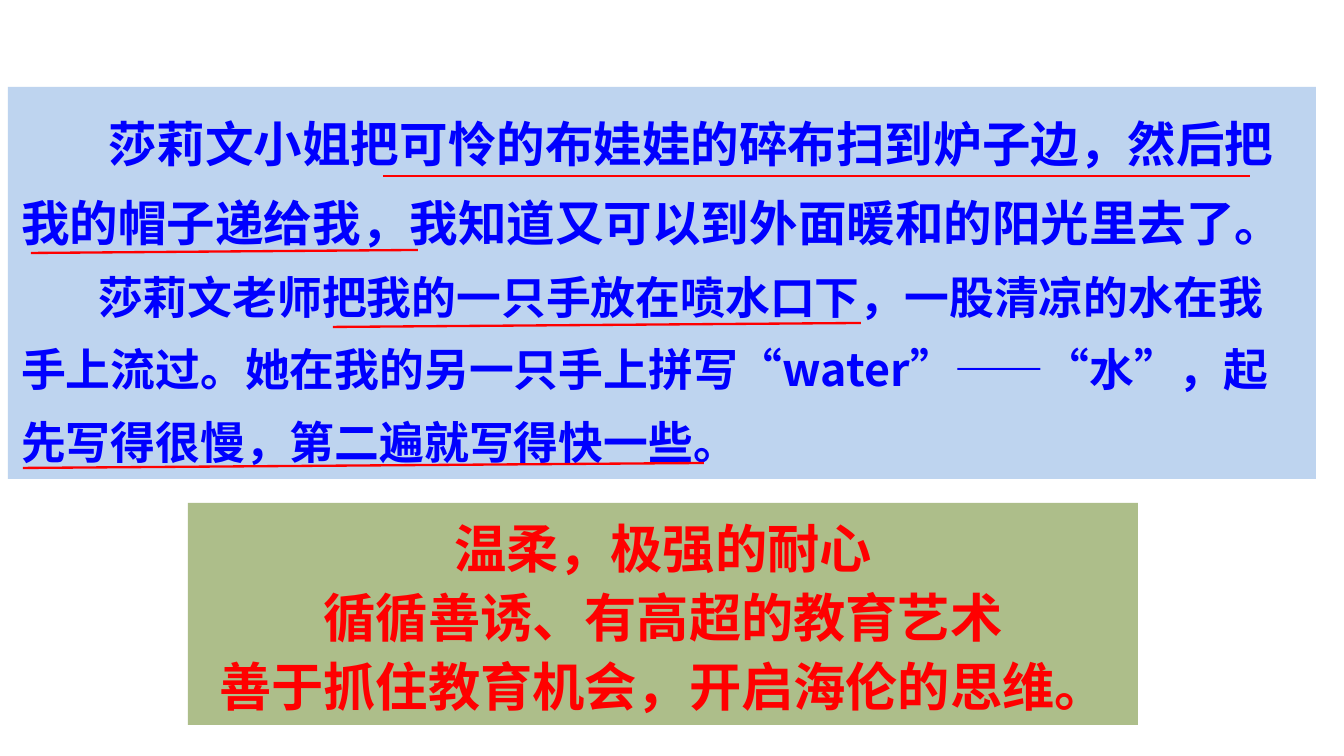
import pptx
import pptx.dml.color
import pptx.enum.lang
import pptx.enum.shapes
import pptx.enum.text
import pptx.oxml
import pptx.oxml.ns
import pptx.util

ALIGN = pptx.enum.text.PP_ALIGN


def px(length):
    return pptx.util.Emu(round(length * 914400 / 134.4))


def colour(hex_code):
    return pptx.dml.color.RGBColor.from_string(hex_code)


class PassageSlide:
    font_name = "Noto Sans CJK SC"
    underline_colour = "FF0000"
    underline_width = 1.25

    def __init__(self, slide):
        self.slide = slide

    def panel(self, left, top, width, height, fill, opacity):
        panel = self.slide.shapes.add_textbox(px(left), px(top), px(width), px(height))
        panel.fill.solid()
        panel.fill.fore_color.rgb = colour(fill)
        tint = panel.fill._xPr.find(".//" + pptx.oxml.ns.qn("a:srgbClr"))
        alpha = tint.makeelement(pptx.oxml.ns.qn("a:alpha"), {"val": str(opacity * 1000)})
        tint.append(alpha)
        panel.text_frame.word_wrap = True
        panel.text_frame.auto_size = pptx.enum.text.MSO_AUTO_SIZE.SHAPE_TO_FIT_TEXT
        return panel.text_frame

    def format_paragraph(self, paragraph, size, hex_code, spacing, align, indent=0):
        paragraph.alignment = align
        paragraph.line_spacing = spacing
        if indent:
            paragraph._p.get_or_add_pPr().set("indent", str(px(indent)))
        for run in paragraph.runs:
            run.font.size = pptx.util.Pt(size)
            run.font.bold = True
            run.font.color.rgb = colour(hex_code)
            run.font.name = self.font_name
            run.font.language_id = pptx.enum.lang.MSO_LANGUAGE_ID.SIMPLIFIED_CHINESE
            latin = run.font._element.find(pptx.oxml.ns.qn("a:latin"))
            latin.addnext(latin.makeelement(pptx.oxml.ns.qn("a:ea"), {"typeface": self.font_name}))

    def underline(self, x1, y1, x2, y2):
        line = self.slide.shapes.add_connector(
            pptx.enum.shapes.MSO_CONNECTOR.STRAIGHT, px(x1), px(y1), px(x2), px(y2))
        line.line.color.rgb = colour(self.underline_colour)
        line.line.width = pptx.util.Pt(self.underline_width)
        properties = line._element.spPr
        properties.append(properties.makeelement(pptx.oxml.ns.qn("a:effectLst"), {}))


def main():
    presentation = pptx.Presentation()
    presentation.slide_width = px(1344)
    presentation.slide_height = px(756)
    page = PassageSlide(presentation.slides.add_slide(presentation.slide_layouts[6]))

    insights = page.panel(188, 503, 950, 222, "77933C", 60)
    insights.text = "温柔，极强的耐心\n循循善诱、有高超的教育艺术\n善于抓住教育机会，开启海伦的思维。"
    for insight in insights.paragraphs:
        page.format_paragraph(insight, 28, "FF0000", 1.1, ALIGN.CENTER)

    passage = page.panel(8, 87, 1308, 392, "8EB4E3", 57)
    passage.text = (
        "莎莉文小姐把可怜的布娃娃的碎布扫到炉子边，然后把我的帽子递给我，"
        "我知道又可以到外面暖和的阳光里去了。\n"
        "莎莉文老师把我的一只手放在喷水口下，一股清凉的水在我手上流过。"
        "她在我的另一只手上拼写“water”——“水”，起先写得很慢，第二遍就写得快一些。")
    for excerpt, size, indent in zip(passage.paragraphs, (26, 24), (87, 77)):
        page.format_paragraph(excerpt, size, "0000FF", 1.35, ALIGN.LEFT, indent)

    for ends in ((333, 327, 861, 323), (23, 468, 704, 463),
                 (383, 176, 1250, 176), (31, 253, 418, 250)):
        page.underline(*ends)

    presentation.save("out.pptx")


if __name__ == "__main__":
    main()
